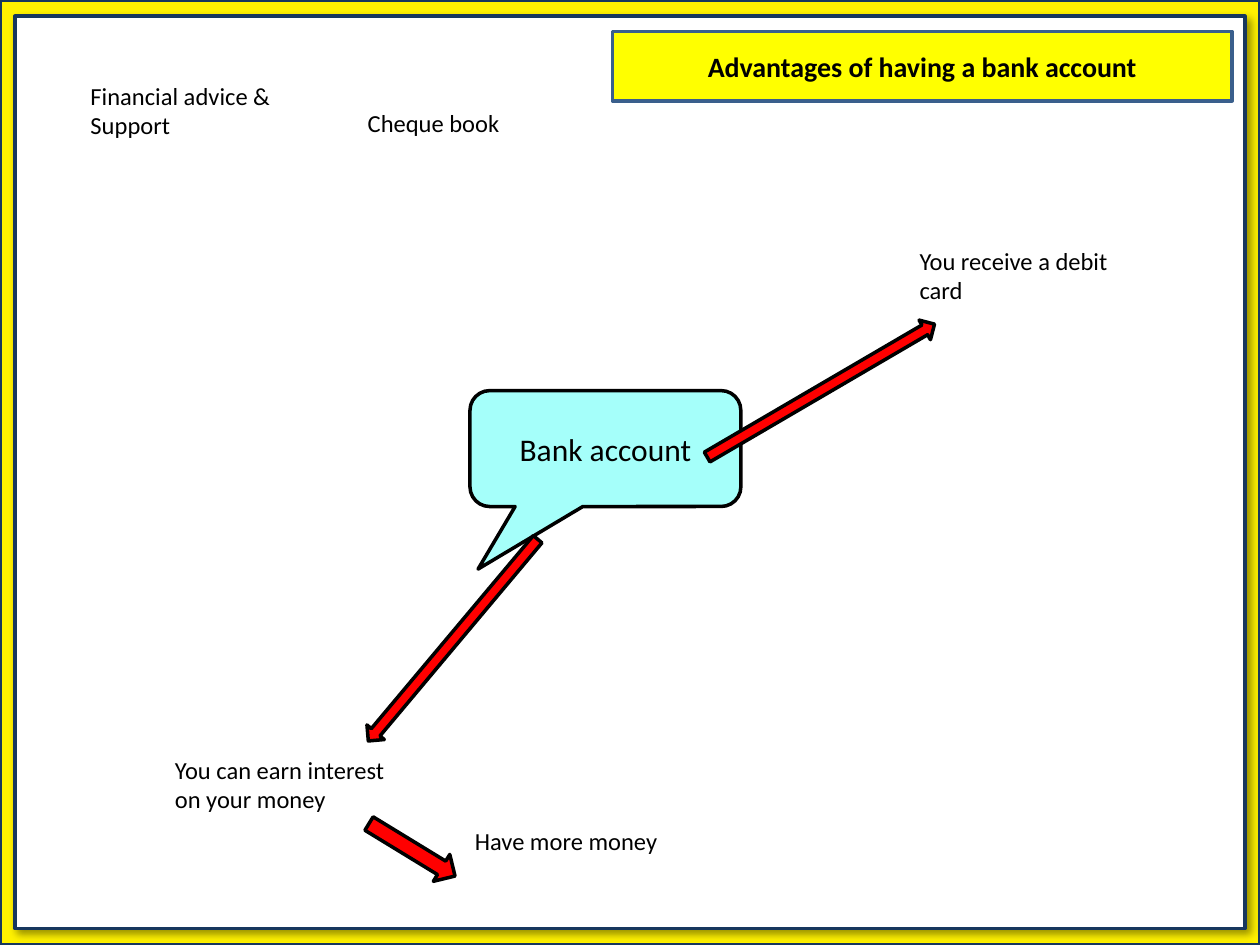
from dataclasses import dataclass

from lxml.etree import SubElement
from pptx import Presentation
from pptx.dml.color import RGBColor
from pptx.enum.shapes import MSO_SHAPE as Preset
from pptx.enum.text import MSO_ANCHOR as Anchor, MSO_AUTO_SIZE as AutoSize, PP_ALIGN as Align
from pptx.oxml.ns import qn
from pptx.util import Emu, Pt

PX = 9144  # 100 px to the inch
BLACK, WHITE, RED, NAVY = "000000", "FFFFFF", "FF0000", "17375E"


@dataclass
class Panel:
    left: int
    top: int
    width: int
    height: int
    fill: str
    line: str = BLACK
    line_width: float = 2
    preset: Preset = Preset.RECTANGLE
    rotation: float = 0
    adjustments: tuple[float, ...] = ()
    text: str = ""
    size: int = 18
    bold: bool = False


@dataclass
class Label:
    left: int
    top: int
    height: int
    text: str


BORDER = Panel(0, 0, 1000, 750, "FFF200", NAVY, 2.25)
SHEET = Panel(12, 13, 976, 724, WHITE, NAVY, 2.25)
TITLE = Panel(486, 25, 492, 55, "FFFF00", "3A5F8C",
              text="Advantages of having a bank account", size=16, bold=True)
BUBBLE = Panel(373, 310, 215, 92, "A5FFFA", preset=Preset.ROUNDED_RECTANGULAR_CALLOUT,
               adjustments=(-0.47, 1.04, 0.17), text="Bank account")


def red_arrow(left: int, top: int, width: int, height: int, rotation: float) -> Panel:
    return Panel(left, top, width, height, RED, preset=Preset.RIGHT_ARROW, rotation=rotation)


ARROWS = [
    red_arrow(547, 301, 209, 18, 329.7),
    red_arrow(255, 499, 209, 18, 130),
    red_arrow(287, 662, 80, 25, 31.4),
]
LABEL_WIDTH = 204
LABELS = [
    Label(129, 594, 81, "You can earn interest on your money"),
    Label(720, 190, 57, "You receive a debit card"),
    Label(367, 651, 34, "Have more money"),
    Label(62, 59, 57, "Financial advice & Support"),
    Label(282, 81, 34, "Cheque book"),
]


def px(*lengths: int) -> list[Emu]:
    return [Emu(length * PX) for length in lengths]


def colour(value: str) -> RGBColor:
    return RGBColor.from_string(value)


def write(box, text: str, align: Align, size: int, bold: bool = False) -> None:
    para = box.text_frame.paragraphs[0]
    para.alignment = align
    span = para.add_run()
    span.text = text
    for name, value in {"name": "Calibri", "size": Pt(size), "bold": bold}.items():
        setattr(span.font, name, value)
    span.font.color.rgb = colour(BLACK)


def draw_panel(page, panel: Panel):
    shape = page.shapes.add_shape(
        panel.preset, *px(panel.left, panel.top, panel.width, panel.height))
    shape.shadow.inherit = False
    shape.rotation = panel.rotation
    for index, value in enumerate(panel.adjustments):
        shape.adjustments[index] = value
    shape.fill.solid()
    shape.fill.fore_color.rgb = colour(panel.fill)
    shape.line.color.rgb = colour(panel.line)
    shape.line.width = Pt(panel.line_width)
    if panel.text:
        shape.text_frame.word_wrap = True
        shape.text_frame.vertical_anchor = Anchor.MIDDLE
        write(shape, panel.text, Align.CENTER, panel.size, panel.bold)
    return shape


def draw_label(page, label: Label) -> None:
    box = page.shapes.add_textbox(*px(label.left, label.top, LABEL_WIDTH, label.height))
    frame_format = {"word_wrap": True, "auto_size": AutoSize.SHAPE_TO_FIT_TEXT}
    for name, value in frame_format.items():
        setattr(box.text_frame, name, value)
    write(box, label.text, Align.LEFT, 14)


def add_shadow(shape) -> None:
    """Cast a soft 40 % black shadow to the lower right."""
    effects = shape._element.spPr.find(qn("a:effectLst"))
    shadow = SubElement(effects, qn("a:outerShdw"), blurRad=str(Pt(4)), dist=str(Pt(3)),
                        dir=str(45 * 60000), algn="tl", rotWithShape="0")
    tint = SubElement(shadow, qn("a:srgbClr"), val=BLACK)
    SubElement(tint, qn("a:alpha"), val="40000")


def main() -> None:
    deck = Presentation()
    deck.slide_width, deck.slide_height = px(1000, 750)
    page = deck.slides.add_slide(deck.slide_layouts[6])
    draw_panel(page, BORDER)
    add_shadow(draw_panel(page, SHEET))
    for panel in [TITLE, BUBBLE, *ARROWS]:
        draw_panel(page, panel)
    for label in LABELS:
        draw_label(page, label)
    deck.save("out.pptx")


if __name__ == "__main__":
    main()
